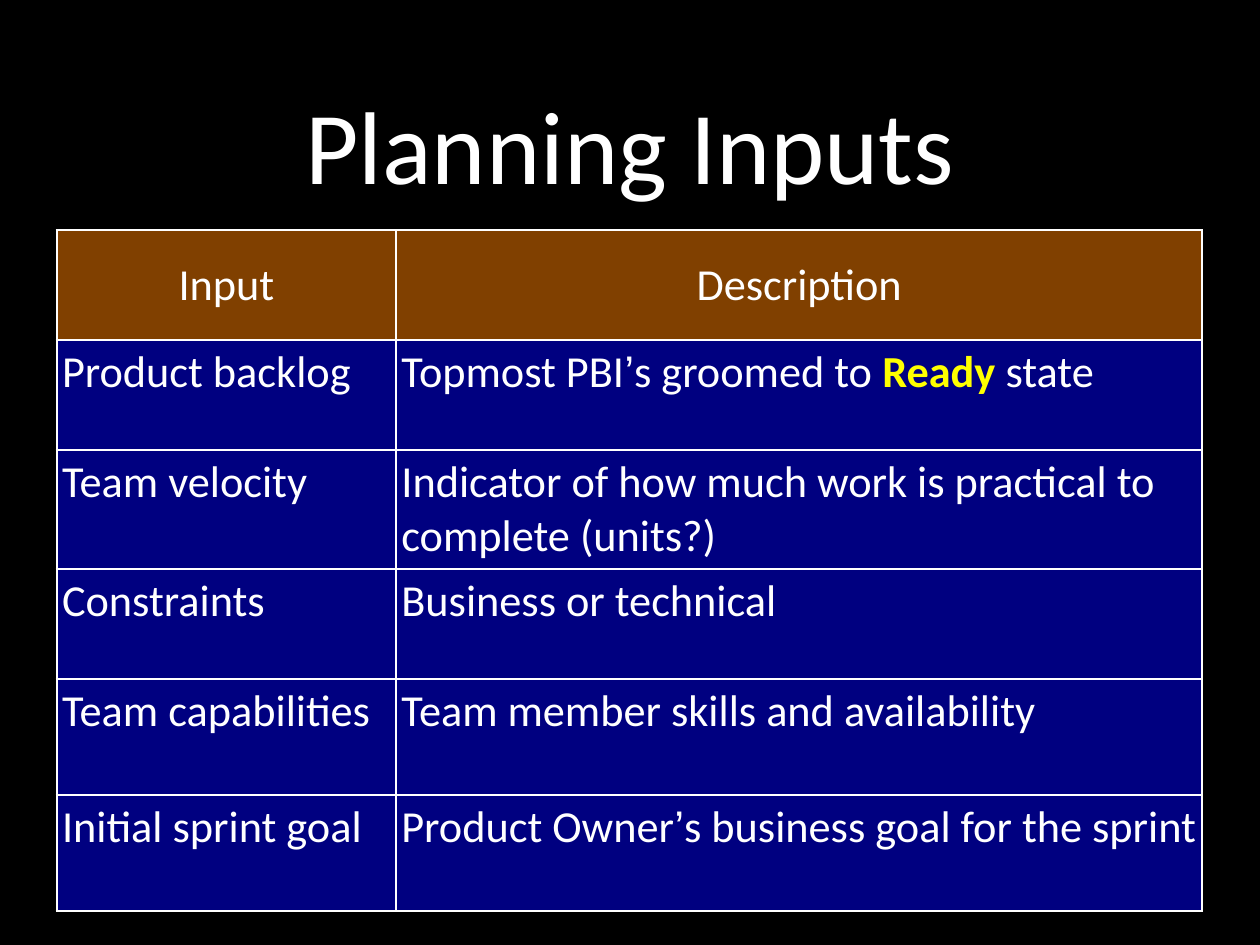
from dataclasses import dataclass

from lxml.etree import SubElement
from pptx import Presentation
from pptx.dml.color import RGBColor
from pptx.enum.text import MSO_ANCHOR as Anchor, MSO_AUTO_SIZE as AutoSize, PP_ALIGN as Align
from pptx.oxml.ns import qn
from pptx.util import Inches, Pt


@dataclass(frozen=True)
class Theme:
    """Colours, fonts and sizes of the slide."""

    background: str = "000000"
    text: str = "FFFFFF"
    accent: str = "FFFF00"
    header_fill: str = "804000"
    body_fill: str = "000080"
    font: str = "Calibri"
    apostrophe_font: str = "Arial"
    title_size: int = 84
    table_size: int = 36
    border: int = 2
    inset: float = 0.06


THEME = Theme()
COLUMN_WIDTHS = [3.83, 9.1]
ROW_HEIGHTS = [1.24, 1.24, 1.31, 1.24, 1.31, 1.31]
PLANNING_INPUTS = [
    ("Input", "Description"),
    ("Product backlog", "Topmost PBI’s groomed to Ready state"),
    ("Team velocity", "Indicator of how much work is practical to complete (units?)"),
    ("Constraints", "Business or technical"),
    ("Team capabilities", "Team member skills and availability"),
    ("Initial sprint goal", "Product Owner’s business goal for the sprint"),
]


def color(value):
    """Turn a hex string into a colour."""
    return RGBColor.from_string(value)


def set_insets(holder):
    """Give a cell or text frame the same margin on every side."""
    for side in ("left", "top", "right", "bottom"):
        setattr(holder, f"margin_{side}", Inches(THEME.inset))


def format_paragraph(para, size, align):
    """Set the font and alignment of a whole paragraph."""
    para.alignment = align
    para.font.name = THEME.font
    para.font.size = Pt(size)
    para.font.bold = False
    para.font.color.rgb = color(THEME.text)


def write_spans(para, text):
    """Write text, setting apart apostrophes and the word Ready."""
    marked = text.replace("’", "|’|").replace("Ready", "|Ready|")
    for part in marked.split("|"):
        span = para.add_run()
        span.text = part
        if part == "’":
            span.font.name = THEME.apostrophe_font
        elif part == "Ready":
            span.font.bold = True
            span.font.color.rgb = color(THEME.accent)


def add_borders(cell):
    """Draw a line along each side of a cell."""
    properties = cell._tc.get_or_add_tcPr()
    for side in ("lnL", "lnR", "lnT", "lnB"):
        line = SubElement(properties, qn(f"a:{side}"), w=str(Pt(THEME.border)))
        fill = SubElement(line, qn("a:solidFill"))
        SubElement(fill, qn("a:srgbClr"), val=THEME.text)


def place_title(page, box, text):
    """Put the title in its placeholder within the box."""
    title = page.shapes.title
    title.left, title.top, title.width, title.height = map(Inches, box)
    frame = title.text_frame
    frame.text = text
    frame.word_wrap = True
    frame.auto_size = AutoSize.NONE
    frame.vertical_anchor = Anchor.MIDDLE
    set_insets(frame)
    format_paragraph(frame.paragraphs[0], THEME.title_size, Align.CENTER)


def fill_cell(cell, text, is_header):
    """Write and style one table cell."""
    set_insets(cell)
    cell.vertical_anchor = Anchor.MIDDLE if is_header else Anchor.TOP
    add_borders(cell)
    cell.fill.solid()
    cell.fill.fore_color.rgb = color(THEME.header_fill if is_header else THEME.body_fill)
    para = cell.text_frame.paragraphs[0]
    format_paragraph(para, THEME.table_size, Align.CENTER if is_header else Align.LEFT)
    write_spans(para, text)


def place_table(page, box, rows):
    """Build the table of planning inputs within the box."""
    frame = page.shapes.add_table(len(rows), len(COLUMN_WIDTHS), *map(Inches, box))
    table = frame.table
    table.first_row = table.horz_banding = False
    for column, width in zip(table.columns, COLUMN_WIDTHS):
        column.width = Inches(width)
    for row, height in zip(table.rows, ROW_HEIGHTS):
        row.height = Inches(height)
    for row_index, texts in enumerate(rows):
        for column_index, text in enumerate(texts):
            fill_cell(table.cell(row_index, column_index), text, row_index == 0)


def build_planning_page(deck):
    """Add the slide with its title and table."""
    page = deck.slides.add_slide(deck.slide_layouts.get_by_name("Title Only"))
    page.background.fill.solid()
    page.background.fill.fore_color.rgb = color(THEME.background)
    place_title(page, (1.39, 0.28, 11.44, 2.67), "Planning Inputs")
    place_table(page, (0.64, 2.6, sum(COLUMN_WIDTHS), sum(ROW_HEIGHTS)), PLANNING_INPUTS)


def main():
    """Create and save the deck."""
    deck = Presentation()
    deck.slide_width, deck.slide_height = Inches(14.22), Inches(10.67)
    build_planning_page(deck)
    deck.save("out.pptx")


if __name__ == "__main__":
    main()
